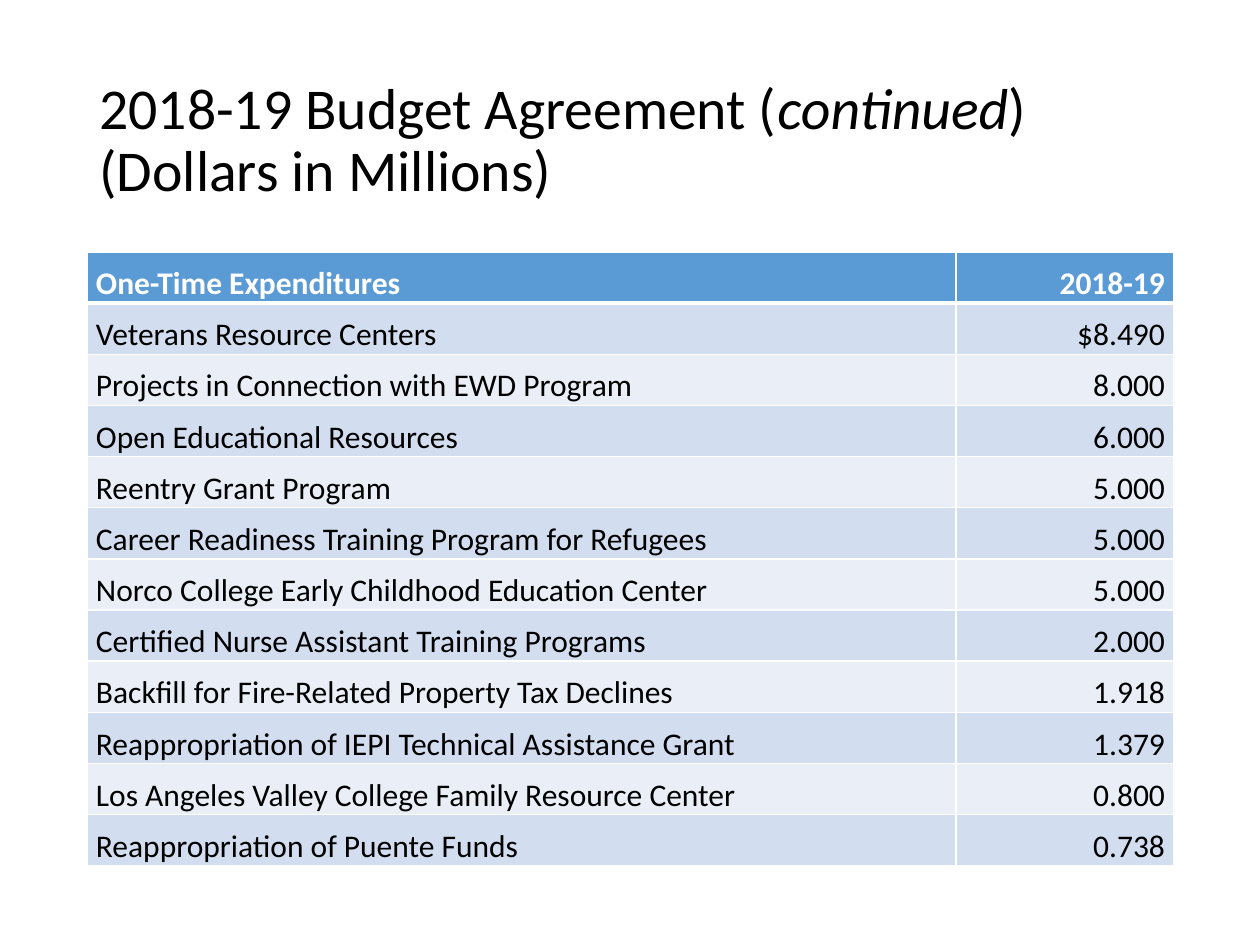
from lxml import etree
from pptx import Presentation
from pptx.dml.color import RGBColor
from pptx.enum import text
from pptx.oxml import ns
from pptx.util import Pt

PX = 914400 // 126
FONT = "Calibri"
COLORS = {
    "header": "5B9BD5",
    "odd": "D2DEEF",
    "even": "EAEFF7",
    "white": "FFFFFF",
    "black": "000000",
}
EXPENDITURES = [
    ("One-Time Expenditures", "2018-19"),
    ("Veterans Resource Centers", "$8.490"),
    ("Projects in Connection with EWD Program", "8.000"),
    ("Open Educational Resources", "6.000"),
    ("Reentry Grant Program", "5.000"),
    ("Career Readiness Training Program for Refugees", "5.000"),
    ("Norco College Early Childhood Education Center", "5.000"),
    ("Certified Nurse Assistant Training Programs", "2.000"),
    ("Backfill for Fire-Related Property Tax Declines", "1.918"),
    ("Reappropriation of IEPI Technical Assistance Grant", "1.379"),
    ("Los Angeles Valley College Family Resource Center", "0.800"),
    ("Reappropriation of Puente Funds", "0.738"),
]
LEFT, TABLE_TOP, TABLE_HEIGHT = 87, 252, 614
COLUMN_WIDTHS = [869, 218]
WIDTH = sum(COLUMN_WIDTHS)


def add_span(para, words, size, color, bold=False, italic=False):
    span = para.add_run()
    span.text = words
    span.font.name = FONT
    span.font.size = Pt(size)
    span.font.bold = bold
    span.font.italic = italic
    span.font.color.rgb = RGBColor.from_string(COLORS[color])


def add_border(cell, side, points):
    line = etree.SubElement(cell._tc.get_or_add_tcPr(), ns.qn(f"a:ln{side}"), w=str(Pt(points)))
    fill = etree.SubElement(line, ns.qn("a:solidFill"))
    etree.SubElement(fill, ns.qn("a:srgbClr"), val=COLORS["white"])


deck = Presentation()
deck.slide_width = 1260 * PX
deck.slide_height = 945 * PX
page = deck.slides.add_slide(deck.slide_layouts[6])

box = page.shapes.add_textbox(LEFT * PX, 50 * PX, WIDTH * PX, 183 * PX)
frame = box.text_frame
frame.word_wrap = True
frame.vertical_anchor = text.MSO_ANCHOR.MIDDLE
para = frame.paragraphs[0]
para.line_spacing = 0.9
add_span(para, "2018-19 Budget Agreement (", 33, "black")
add_span(para, "continued", 33, "black", italic=True)
add_span(para, ")", 33, "black")
para.add_line_break()
add_span(para, "(Dollars in Millions)", 33, "black")

table = page.shapes.add_table(
    len(EXPENDITURES), len(COLUMN_WIDTHS),
    LEFT * PX, TABLE_TOP * PX, WIDTH * PX, TABLE_HEIGHT * PX,
).table
for column, width in zip(table.columns, COLUMN_WIDTHS):
    column.width = width * PX

for row_index, entries in enumerate(EXPENDITURES):
    table.rows[row_index].height = TABLE_HEIGHT * PX // len(EXPENDITURES)
    is_header = row_index == 0
    band = "header" if is_header else "odd" if row_index % 2 else "even"
    for column_index, words in enumerate(entries):
        cell = table.cell(row_index, column_index)
        cell.margin_left = cell.margin_right = 9 * PX
        cell.margin_top = cell.margin_bottom = 0
        cell.vertical_anchor = text.MSO_ANCHOR.BOTTOM
        for side in "LRTB":
            header_edge = (side == "B" and is_header) or (side == "T" and row_index == 1)
            add_border(cell, side, 3 if header_edge else 1)
        cell.fill.solid()
        cell.fill.fore_color.rgb = RGBColor.from_string(COLORS[band])
        para = cell.text_frame.paragraphs[0]
        para.alignment = text.PP_ALIGN.RIGHT if column_index else text.PP_ALIGN.LEFT
        add_span(para, words, 18, "white" if is_header else "black", bold=is_header)

deck.save("out.pptx")
